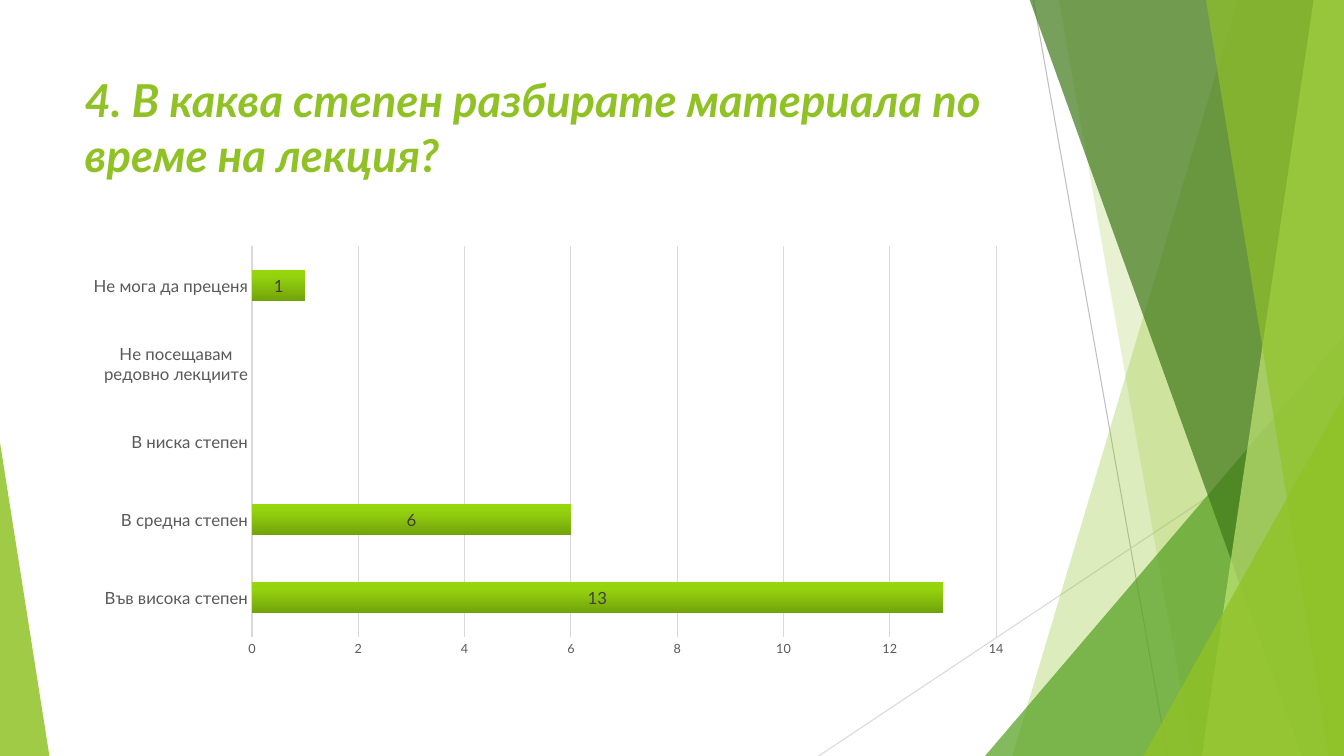
from copy import deepcopy
from typing import NamedTuple

from lxml import etree
from pptx import Presentation
from pptx import util as u
from pptx.chart import data as chart_data
from pptx.dml import color
from pptx.enum import chart as ch
from pptx.enum import shapes, text
from pptx.oxml import ns

FONT = "Lato"
COLORS = {
    "lime": "90C226", "green": "54A021", "forest": "3F7819", "pale": "C0E474",
    "line": "BFBFBF", "grid": "D9D9D9", "axis": "595959", "label": "404040",
    "bar_dark": "72A20B", "bar_mid": "94D30E", "bar_light": "96D70A",
}
RIGHT, TOP, BOTTOM = 13.33, -0.01, 7.5


class Ray(NamedTuple):
    start: tuple[float, float]
    end: tuple[float, float]
    color: str


class Band(NamedTuple):
    top_x: float
    bottom_x: float
    color: str
    opacity: int


class Wedge(NamedTuple):
    left: float
    top: float
    width: float
    apex: float
    color: str
    opacity: int


DECOR = [
    Ray((10.25, 0), (11.58, 7.5), "line"),
    Ray((13.33, 4.03), (8.12, 7.5), "grid"),
    Band(12.28, 10.04, "lime", 30),
    Band(10.5, 11.83, "lime", 20),
    Wedge(9.77, 3.33, 3.56, 1, "green", 72),
    Band(10.21, 12.91, "forest", 70),
    Band(13.03, 11.92, "pale", 70),
    Band(11.96, 13.18, "lime", 65),
    Wedge(11.34, 3.93, 1.99, 1, "lime", 80),
    Wedge(0, 4.39, 0.49, 0, "lime", 85),
]
ANSWERS = {
    "Във висока степен": 13,
    "В средна степен": 6,
    "В ниска степен": None,
    "Не посещавам редовно лекциите": None,
    "Не мога да преценя": 1,
}


def rgb(name: str) -> color.RGBColor:
    return color.RGBColor.from_string(COLORS[name])


def set_font(font, size: float, name: str, bold: bool = False, italic: bool = False) -> None:
    font.name, font.size = FONT, u.Pt(size)
    font.bold, font.italic = bold, italic
    font.color.rgb = rgb(name)


def set_line(line, name: str, width: float) -> None:
    line.color.rgb = rgb(name)
    line.width = u.Pt(width)


def fill_shape(sp, name: str, opacity: int) -> None:
    sp.shadow.inherit = False
    sp.line.fill.background()
    sp.fill.solid()
    sp.fill.fore_color.rgb = rgb(name)
    clr = sp.fill._xPr.find(".//" + ns.qn("a:srgbClr"))
    etree.SubElement(clr, ns.qn("a:alpha"), val=str(opacity * 1000))


def add_ray(slide, ray: Ray) -> None:
    ends = [u.Inches(v) for v in ray.start + ray.end]
    line = slide.shapes.add_connector(shapes.MSO_CONNECTOR.STRAIGHT, *ends)
    set_line(line.line, ray.color, 0.75)
    etree.SubElement(line._element.spPr, ns.qn("a:effectLst"))


def add_band(slide, band: Band) -> None:
    corners = [(band.top_x, TOP), (RIGHT, TOP), (RIGHT, BOTTOM), (band.bottom_x, BOTTOM)]
    points = [(u.Inches(x), u.Inches(y)) for x, y in corners]
    builder = slide.shapes.build_freeform(*points[0])
    builder.add_line_segments(points[1:], close=True)
    fill_shape(builder.convert_to_shape(), band.color, band.opacity)


def add_wedge(slide, wedge: Wedge) -> None:
    sp = slide.shapes.add_shape(
        shapes.MSO_SHAPE.ISOSCELES_TRIANGLE, u.Inches(wedge.left), u.Inches(wedge.top),
        u.Inches(wedge.width), u.Inches(BOTTOM - wedge.top))
    sp.adjustments[0] = wedge.apex
    fill_shape(sp, wedge.color, wedge.opacity)


def write_text(sp, content: str, **font_format) -> None:
    tf = sp.text_frame
    tf.word_wrap = True
    tf.auto_size = text.MSO_AUTO_SIZE.NONE
    tf.vertical_anchor = text.MSO_ANCHOR.TOP
    p = tf.paragraphs[0]
    p.alignment = text.PP_ALIGN.LEFT
    p.line_spacing = 1.0
    r = p.add_run()
    r.text = content
    set_font(r.font, **font_format)


def fill_bars(fill) -> None:
    fill.gradient()
    fill.gradient_angle = 90
    first = fill.gradient_stops[0]._gs
    first.addnext(deepcopy(first))
    stops = [(0, "bar_dark"), (0.8, "bar_mid"), (1, "bar_light")]
    for stop, (position, name) in zip(fill.gradient_stops, stops):
        stop.position = position
        stop.color.rgb = rgb(name)


def add_answer_chart(slide) -> None:
    data = chart_data.CategoryChartData()
    data.categories = list(ANSWERS)
    data.add_series("Series 1", list(ANSWERS.values()))
    chart = slide.shapes.add_chart(
        ch.XL_CHART_TYPE.BAR_STACKED, u.Inches(0.74), u.Inches(2.36),
        u.Inches(9.4), u.Inches(4.24), data).chart
    chart.has_legend = chart.has_title = False
    set_font(chart.font, 10, "axis")

    categories, values = chart.category_axis, chart.value_axis
    for axis, size in ((categories, 12), (values, 9)):
        axis.major_tick_mark = axis.minor_tick_mark = ch.XL_TICK_MARK.NONE
        set_font(axis.tick_labels.font, size, "axis")
    set_line(categories.format.line, "grid", 1)
    values.format.line.fill.background()
    values.minimum_scale, values.maximum_scale, values.major_unit = 0, 14, 2
    values.has_major_gridlines = True
    set_line(values.major_gridlines.format.line, "grid", 0.75)

    plot = chart.plots[0]
    plot.gap_width, plot.overlap = 150, 100
    plot.vary_by_categories = False
    bars = plot.series[0]
    fill_bars(bars.format.fill)
    labels = bars.data_labels
    labels.show_value = True
    labels.position = ch.XL_LABEL_POSITION.CENTER
    set_font(labels.font, 12, "label")


def main() -> None:
    prs = Presentation()
    prs.slide_width, prs.slide_height = u.Inches(13.33), u.Inches(7.5)
    slide = prs.slides.add_slide(prs.slide_layouts.get_by_name("Title Only"))
    draw = {Ray: add_ray, Band: add_band, Wedge: add_wedge}
    for item in DECOR:
        draw[type(item)](slide, item)

    title = slide.shapes.title
    title.left, title.top = u.Inches(0.74), u.Inches(0.67)
    title.width, title.height = u.Inches(9.4), u.Inches(1.44)
    write_text(title, "4. В каква степен разбирате материала по време на лекция?",
               size=32.4, name="lime", bold=True, italic=True)
    add_answer_chart(slide)
    prs.save("out.pptx")


if __name__ == "__main__":
    main()
